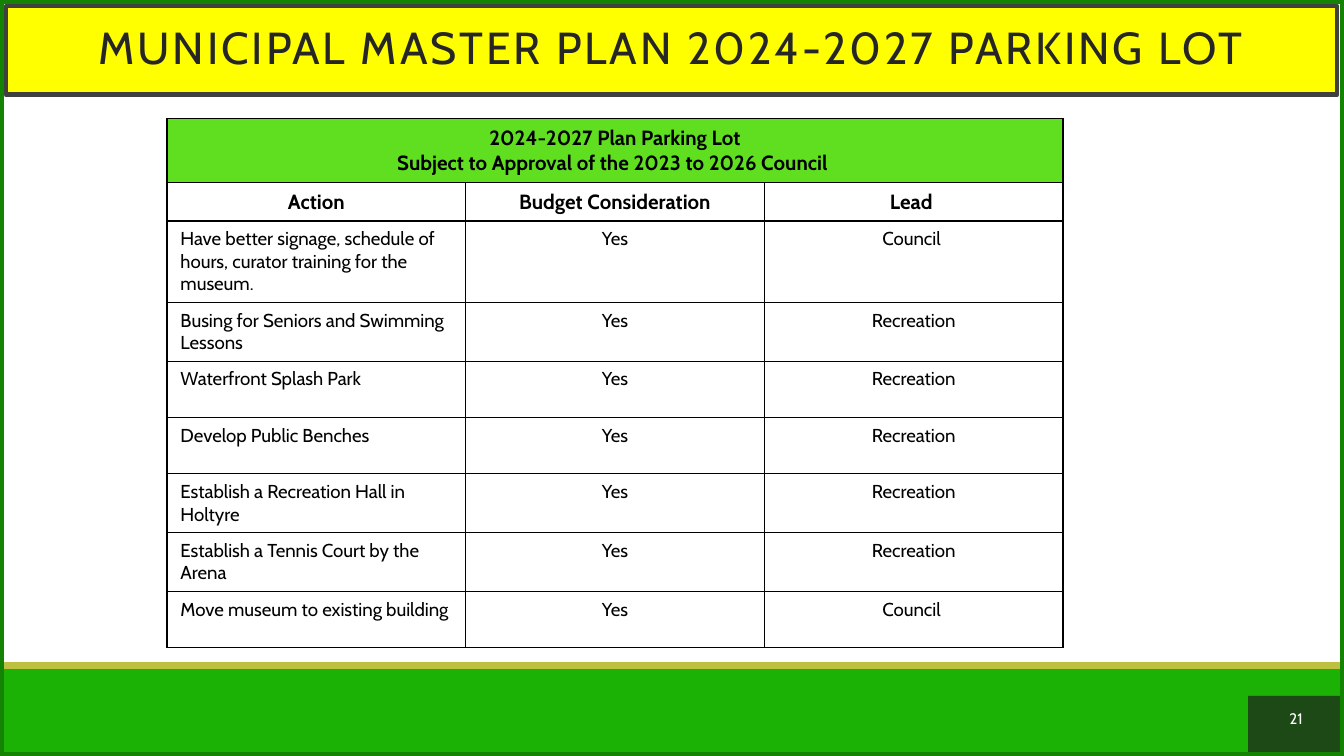
from dataclasses import dataclass

from pptx import Presentation
from pptx.dml.color import RGBColor
from pptx.enum import shapes, text
from pptx.oxml import parse_xml
from pptx.oxml import ns
from pptx.util import Pt


@dataclass(frozen=True)
class Theme:
    font: str = "Cabin"
    # Colours
    white: str = "FFFFFF"
    black: str = "000000"
    band: str = "1BB105"
    rule: str = "BEC13F"
    frame: str = "148304"
    page: str = "1D1D1D"
    title_fill: str = "FFFF00"
    title_line: str = "404040"
    title_text: str = "262626"
    heading_fill: str = "60DF20"
    # Type sizes
    title_size: float = 24
    heading_size: float = 11
    body_size: float = 10
    page_size: float = 8.2


T = Theme()
W, H = 720, 405
CENTER, LEFT = text.PP_ALIGN.CENTER, text.PP_ALIGN.LEFT
TOP, MIDDLE = text.MSO_ANCHOR.TOP, text.MSO_ANCHOR.MIDDLE

HEADING = "2024-2027 Plan Parking Lot\nSubject to Approval of the 2023 to 2026 Council "
COLUMNS = ("Action", "Budget Consideration", "Lead ")
ACTIONS = [
    ("Have better signage, schedule of hours, curator training for the museum.", "Council "),
    ("Busing for Seniors and Swimming Lessons", "Recreation"),
    ("Waterfront Splash Park", "Recreation"),
    ("Develop Public Benches", "Recreation"),
    ("Establish a Recreation Hall in Holtyre", "Recreation"),
    ("Establish a Tennis Court by the Arena", "Recreation"),
    ("Move museum to existing building", "Council "),
]


def rgb(color):
    return RGBColor.from_string(color)


def write(tf, content, size, color, bold=False, align=CENTER, spacing=None):
    """Fill a text frame, one paragraph per line of content."""
    fmt = {"name": T.font, "size": Pt(size), "bold": bold}
    for i, line in enumerate(content.split("\n")):
        p = tf.add_paragraph() if i else tf.paragraphs[0]
        p.alignment = align
        if spacing:
            p.line_spacing = spacing
        r = p.add_run()
        r.text = line
        for name, value in fmt.items():
            setattr(r.font, name, value)
        r.font.color.rgb = rgb(color)


def add_box(s, x, y, w, h, fill=None, line=None, width=0, anchor=TOP):
    sp = s.shapes.add_shape(shapes.MSO_SHAPE.RECTANGLE, Pt(x), Pt(y), Pt(w), Pt(h))
    sp.shadow.inherit = False
    if fill:
        sp.fill.solid()
        sp.fill.fore_color.rgb = rgb(fill)
    else:
        sp.fill.background()
    if line:
        sp.line.color.rgb = rgb(line)
        sp.line.width = Pt(width)
    else:
        sp.line.fill.background()
    tf = sp.text_frame
    fmt = {"word_wrap": True, "vertical_anchor": anchor}
    fmt.update({f"margin_{side}": Pt(7.2) for side in ("left", "right", "top", "bottom")})
    for name, value in fmt.items():
        setattr(tf, name, value)
    return sp


def add_rule(s, x1, x2, y, color, width):
    c = s.shapes.add_connector(shapes.MSO_CONNECTOR.STRAIGHT, Pt(x1), Pt(y), Pt(x2), Pt(y))
    c.line.color.rgb = rgb(color)
    c.line.width = Pt(width)
    c._element.spPr.append(parse_xml(f"<a:effectLst {ns.nsdecls('a')}/>"))


def set_opacity(sp, percent):
    color = sp.fill._xPr.find(ns.qn("a:solidFill"))[0]
    color.append(parse_xml(f'<a:alpha {ns.nsdecls("a")} val="{percent * 1000}"/>'))


def style_cell(cell, fill):
    """Draw the four borders, then the fill."""
    tcPr = cell._tc.get_or_add_tcPr()
    for side in ("lnL", "lnR", "lnT", "lnB"):
        tcPr.append(parse_xml(
            f'<a:{side} {ns.nsdecls("a")} w="{Pt(0.75)}"><a:solidFill>'
            f'<a:srgbClr val="{T.black}"/></a:solidFill></a:{side}>'))
    if fill:
        cell.fill.solid()
        cell.fill.fore_color.rgb = rgb(fill)
    else:
        cell.fill.background()


def add_plan_table(s, x, y, col_width, head_height, row_height):
    rows = [(HEADING, "", ""), COLUMNS] + [(action, "Yes", lead) for action, lead in ACTIONS]
    heights = [head_height] * 2 + [row_height] * len(ACTIONS)
    n = len(COLUMNS)
    table = s.shapes.add_table(len(rows), n, Pt(x), Pt(y),
                               Pt(col_width * n), Pt(sum(heights))).table
    table.first_row = table.horz_banding = False
    for col in table.columns:
        col.width = Pt(col_width)
    table.cell(0, 0).merge(table.cell(0, n - 1))
    for i, (values, height) in enumerate(zip(rows, heights)):
        table.rows[i].height = Pt(height)
        head = i < 2
        for j, value in enumerate(values):
            cell = table.cell(i, j)
            style_cell(cell, None if i else T.heading_fill)
            if value:
                write(cell.text_frame, value, T.heading_size if head else T.body_size,
                      T.black, bold=head, align=CENTER if head or j else LEFT)


def main():
    prs = Presentation()
    prs.slide_width, prs.slide_height = Pt(W), Pt(H)
    s = prs.slides.add_slide(prs.slide_layouts[6])
    s.background.fill.solid()
    s.background.fill.fore_color.rgb = rgb(T.white)

    # Footer band and page number
    band_top = 356.4
    add_box(s, 2, band_top, W - 2, H - band_top, T.band)
    page = add_box(s, 668.6, 372.8, 51.4, 32.2, T.page)
    set_opacity(page, 70)
    write(page.text_frame, "21", T.page_size, T.white)

    # Title banner
    title = add_box(s, 3.2, 3.2, 713, 47.6, T.title_fill, T.title_line, 2.5, MIDDLE)
    write(title.text_frame, "MUNICIPAL MASTER PLAN 2024-2027 PARKING LOT",
          T.title_size, T.title_text, spacing=0.9)
    title.text_frame.paragraphs[0].runs[0].font._element.set("spc", "150")

    # Footer rule and slide frame
    add_rule(s, 2, W, band_top, T.rule, 3.5)
    add_box(s, 0, 0, W, H, line=T.frame, width=4)

    # Parking lot table
    add_plan_table(s, 89.5, 63.6, 160, 19.4, 30.2)

    prs.save("out.pptx")


if __name__ == "__main__":
    main()
